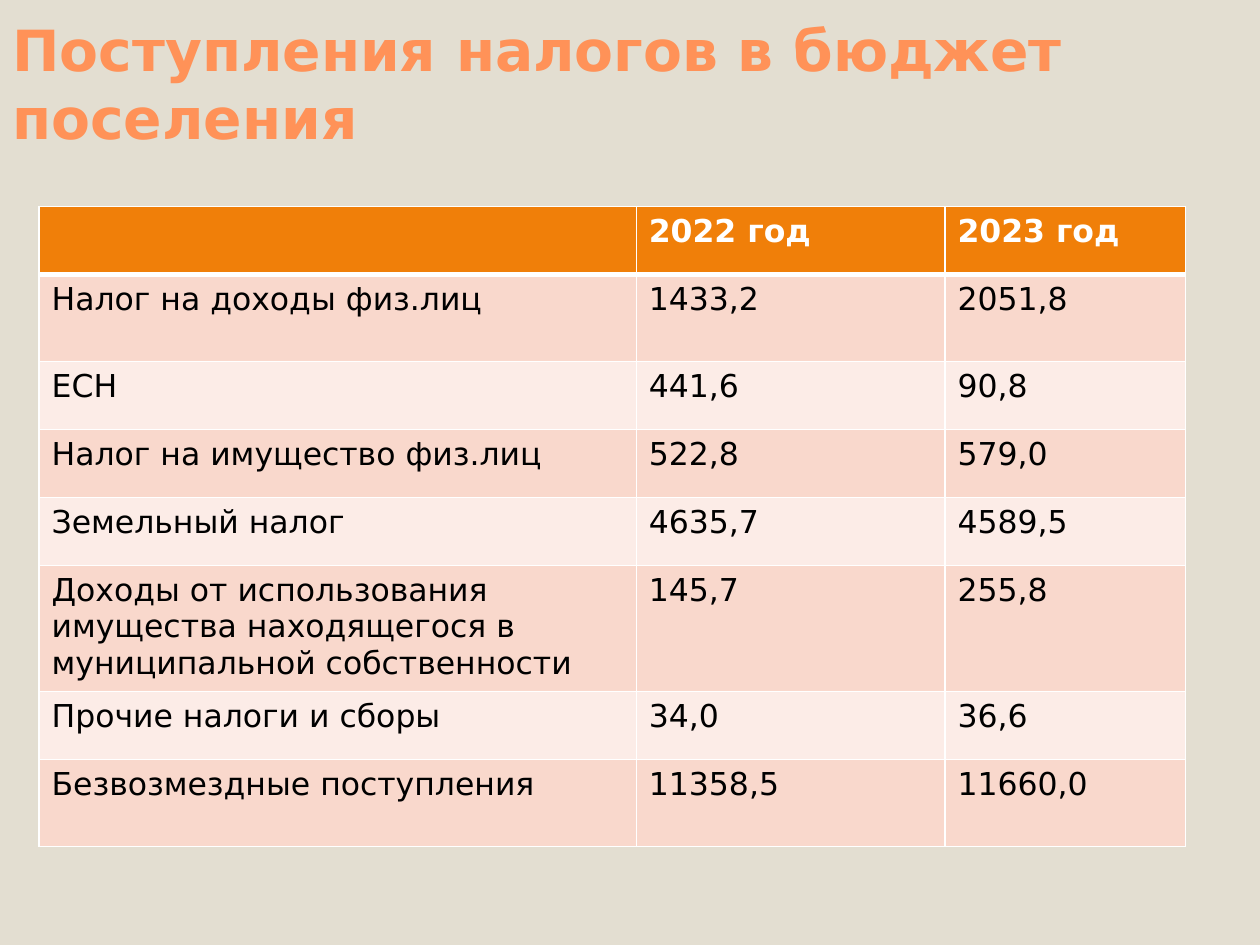
from dataclasses import dataclass

from lxml import etree
from pptx import Presentation
from pptx import util as u
from pptx.dml.color import RGBColor
from pptx.enum import text
from pptx.oxml.ns import qn
from pptx.slide import Slide
from pptx.table import Table, _Cell

FONT = "DejaVu Sans"
COLORS = {
    "background": "E3DED1",
    "title": "FF9258",
    "header": "F07F09",
    "odd_row": "F9D8CC",
    "even_row": "FCECE7",
    "white": "FFFFFF",
    "black": "000000",
}
COLUMN_WIDTHS = (4.74, 2.45, 1.91)


@dataclass
class TaxRow:
    name: str
    year_2022: str
    year_2023: str
    height: float = 0.54


HEADER = TaxRow("", "2022 год", "2023 год")
TAX_ROWS = [
    TaxRow("Налог на доходы физ.лиц", "1433,2", "2051,8", 0.69),
    TaxRow("ЕСН", "441,6", "90,8"),
    TaxRow("Налог на имущество физ.лиц", "522,8", "579,0"),
    TaxRow("Земельный налог", "4635,7", "4589,5"),
    TaxRow(
        "Доходы от использования имущества находящегося в муниципальной собственности",
        "145,7",
        "255,8",
        0.97,
    ),
    TaxRow("Прочие налоги и сборы", "34,0", "36,6"),
    TaxRow("Безвозмездные поступления", "11358,5", "11660,0", 0.69),
]


def color(name: str) -> RGBColor:
    return RGBColor.from_string(COLORS[name])


def style_font(font, size: float, color_name: str, bold: bool) -> None:
    font.name = FONT
    font.size = u.Pt(size)
    font.bold = bold
    font.color.rgb = color(color_name)


def add_title(slide: Slide, wording: str) -> None:
    shape = slide.shapes.add_textbox(
        u.Inches(0), u.Inches(0.25), u.Inches(9.77), u.Inches(1)
    )
    frame = shape.text_frame
    frame.word_wrap = True
    frame.vertical_anchor = text.MSO_ANCHOR.BOTTOM
    paragraph = frame.paragraphs[0]
    paragraph.text = wording
    style_font(paragraph.font, 32.4, "title", True)


def set_borders(cell: _Cell, top: float, bottom: float) -> None:
    properties = cell._tc.get_or_add_tcPr()
    for side, points in (("L", 1), ("R", 1), ("T", top), ("B", bottom)):
        line = etree.SubElement(properties, qn(f"a:ln{side}"), w=str(u.Pt(points)))
        fill = etree.SubElement(line, qn("a:solidFill"))
        etree.SubElement(fill, qn("a:srgbClr"), val=COLORS["white"])


def fill_row(table: Table, index: int, row: TaxRow) -> None:
    is_header = index == 0
    fill_name = "header" if is_header else "odd_row" if index % 2 else "even_row"
    table.rows[index].height = u.Inches(row.height)
    for column, wording in enumerate((row.name, row.year_2022, row.year_2023)):
        cell = table.cell(index, column)
        set_borders(cell, 3 if index == 1 else 1, 3 if is_header else 1)
        cell.fill.solid()
        cell.fill.fore_color.rgb = color(fill_name)
        paragraph = cell.text_frame.paragraphs[0]
        paragraph.text = wording
        style_font(paragraph.font, 18, "white" if is_header else "black", is_header)


def add_tax_table(slide: Slide, rows: list[TaxRow]) -> None:
    table = slide.shapes.add_table(
        len(rows),
        len(COLUMN_WIDTHS),
        u.Inches(0.31),
        u.Inches(1.64),
        u.Inches(sum(COLUMN_WIDTHS)),
        u.Inches(sum(row.height for row in rows)),
    ).table
    for column, width in zip(table.columns, COLUMN_WIDTHS):
        column.width = u.Inches(width)
    for index, row in enumerate(rows):
        fill_row(table, index, row)


def main() -> None:
    presentation = Presentation()
    presentation.slide_width = u.Inches(10)
    presentation.slide_height = u.Inches(7.5)
    slide = presentation.slides.add_slide(presentation.slide_layouts[6])
    slide.background.fill.solid()
    slide.background.fill.fore_color.rgb = color("background")
    add_title(slide, "Поступления налогов в бюджет поселения")
    add_tax_table(slide, [HEADER, *TAX_ROWS])
    presentation.save("out.pptx")


if __name__ == "__main__":
    main()
